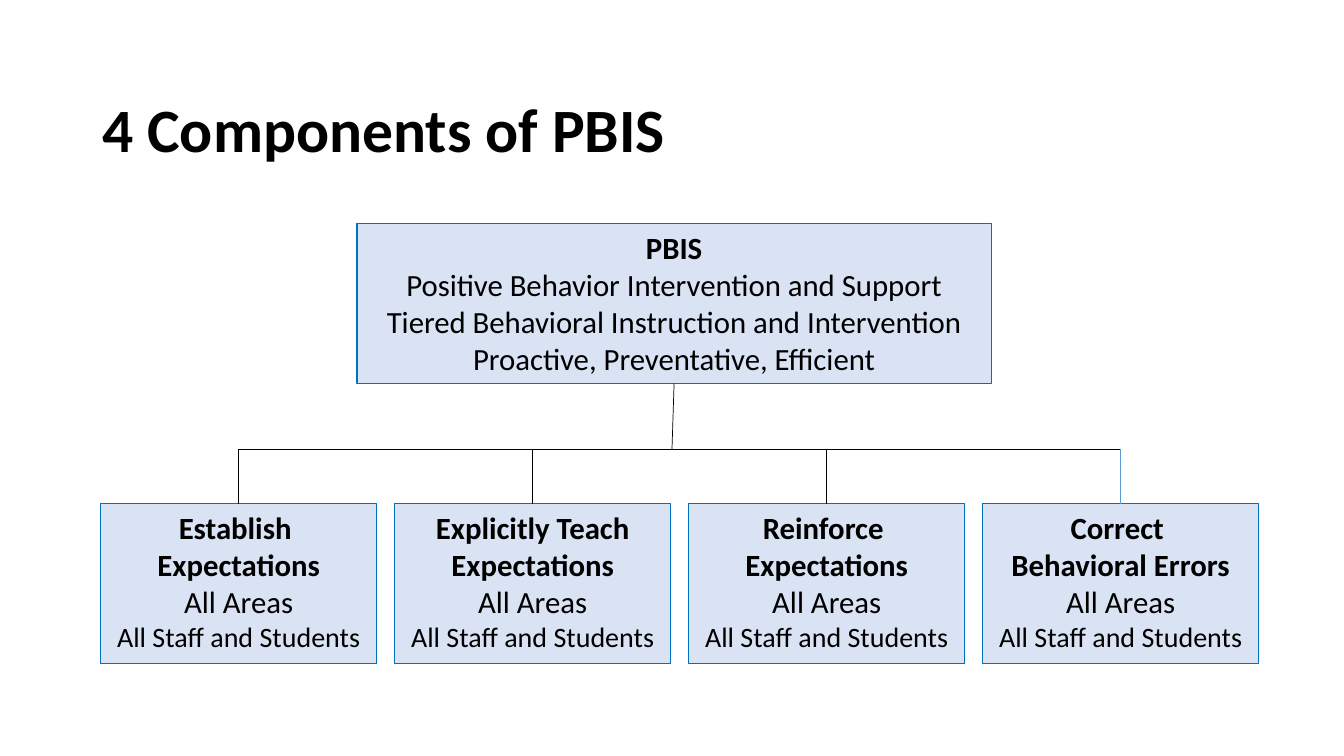
from lxml import etree
from pptx import Presentation
from pptx.dml.color import RGBColor
from pptx.enum.shapes import MSO_CONNECTOR, MSO_SHAPE
from pptx.enum.text import MSO_ANCHOR, MSO_AUTO_SIZE, PP_ALIGN
from pptx.oxml.ns import qn
from pptx.util import Pt

RECTANGLE = MSO_SHAPE.RECTANGLE
STRAIGHT = MSO_CONNECTOR.STRAIGHT
TOP, MIDDLE = MSO_ANCHOR.TOP, MSO_ANCHOR.MIDDLE
LEFT, CENTER = PP_ALIGN.LEFT, PP_ALIGN.CENTER
GROW = MSO_AUTO_SIZE.SHAPE_TO_FIT_TEXT

BLACK, BOX_FILL, BOX_LINE, LAST_DROP = "000000", "DAE3F3", "0070C0", "5B9BD5"

TITLE = {"size": Pt(44), "bold": True}
HEADING = {"size": Pt(22), "bold": True}
BODY = {"size": Pt(22), "bold": False}
SMALL = {"size": Pt(20), "bold": False}

ROOT_LINES = [
    ("PBIS", HEADING),
    ("Positive Behavior Intervention and Support", BODY),
    ("Tiered Behavioral Instruction and Intervention", BODY),
    ("Proactive, Preventative, Efficient", BODY),
]
COMPONENTS = [
    ("Establish ", "Expectations"),
    ("Explicitly Teach", "Expectations"),
    ("Reinforce ", "Expectations"),
    ("Correct ", "Behavioral Errors"),
]
SHARED_LINES = [("All Areas", BODY), ("All Staff and Students", SMALL)]

ROOT_LEFT, ROOT_TOP, ROOT_WIDTH = 255, 160, 453
BOX_HEIGHT = 114
COMPONENT_LEFT, COMPONENT_TOP, COMPONENT_WIDTH = 72, 360, 197
COMPONENT_PITCH = 210
BUS_Y = 321


def color(value):
    return RGBColor.from_string(value)


class Diagram:
    """Holds the text style and the current slide."""

    def __init__(self, slide, font="Calibri"):
        self.slide = slide
        self.font = font

    def add_text(self, shape, lines, alignment, anchor, spacing=None):
        """Fill a shape with one paragraph per (text, format) pair."""
        frame = shape.text_frame
        frame.word_wrap = True
        frame.vertical_anchor = anchor
        for index, (text, style) in enumerate(lines):
            paragraph = frame.add_paragraph() if index else frame.paragraphs[0]
            paragraph.alignment = alignment
            paragraph.line_spacing = spacing
            run = paragraph.add_run()
            run.text = text
            for name, value in {"name": self.font, **style}.items():
                setattr(run.font, name, value)
            run.font.color.rgb = color(BLACK)

    def title(self, text, left, top, width, height):
        shape = self.slide.shapes.add_textbox(Pt(left), Pt(top), Pt(width), Pt(height))
        self.add_text(shape, [(text, TITLE)], LEFT, MIDDLE, 0.9)

    def box(self, lines, left, top, width, height):
        shape = self.slide.shapes.add_shape(
            RECTANGLE, Pt(left), Pt(top), Pt(width), Pt(height))
        shape.shadow.inherit = False
        shape.fill.solid()
        shape.fill.fore_color.rgb = color(BOX_FILL)
        shape.line.color.rgb = color(BOX_LINE)
        shape.line.width = Pt(0.75)
        self.add_text(shape, lines, CENTER, TOP)
        shape.text_frame.auto_size = GROW

    def line(self, start_x, start_y, end_x, end_y, line_color=BLACK):
        connector = self.slide.shapes.add_connector(
            STRAIGHT, Pt(start_x), Pt(start_y), Pt(end_x), Pt(end_y))
        connector.line.color.rgb = color(line_color)
        connector.line.width = Pt(0.5)
        etree.SubElement(connector._element.spPr, qn("a:effectLst"))


def main():
    presentation = Presentation()
    presentation.slide_width, presentation.slide_height = Pt(960), Pt(540)
    blank = presentation.slide_layouts[6]
    diagram = Diagram(presentation.slides.add_slide(blank))

    diagram.title("4 Components of PBIS", 66, 29, 828, 131)
    diagram.box(ROOT_LINES, ROOT_LEFT, ROOT_TOP, ROOT_WIDTH, BOX_HEIGHT)

    centers = []
    for index, headings in enumerate(COMPONENTS):
        left = COMPONENT_LEFT + index * COMPONENT_PITCH
        lines = [(text, HEADING) for text in headings] + SHARED_LINES
        diagram.box(lines, left, COMPONENT_TOP, COMPONENT_WIDTH, BOX_HEIGHT)
        centers.append(left + COMPONENT_WIDTH / 2)

    diagram.line(centers[0], BUS_Y, centers[-1], BUS_Y)
    diagram.line(ROOT_LEFT + ROOT_WIDTH / 2, ROOT_TOP + BOX_HEIGHT, 480, BUS_Y)
    for center in centers:
        drop_color = LAST_DROP if center == centers[-1] else BLACK
        diagram.line(center, BUS_Y, center, COMPONENT_TOP, drop_color)

    presentation.save("out.pptx")


if __name__ == "__main__":
    main()
